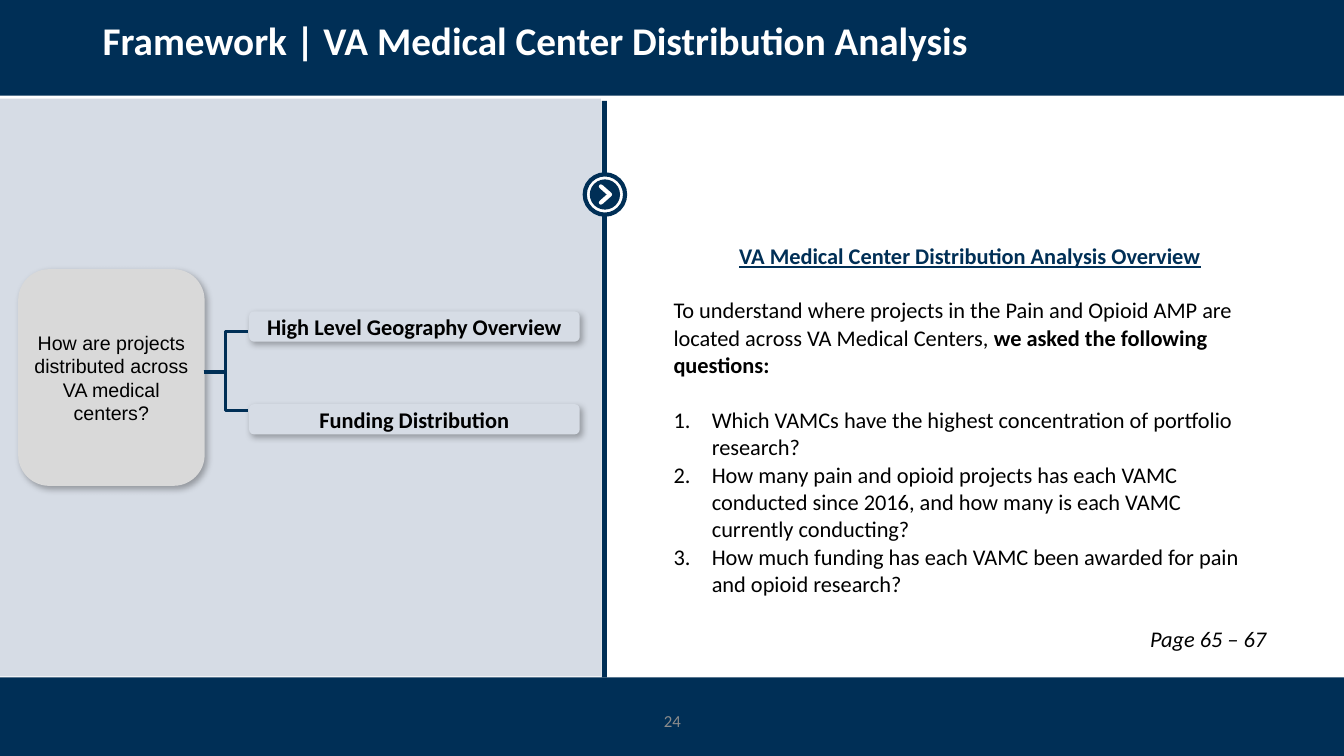
from lxml import etree
from pptx import Presentation
from pptx.dml.color import RGBColor
from pptx.enum.shapes import MSO_CONNECTOR as Link, MSO_SHAPE as Kind
from pptx.enum.text import MSO_ANCHOR as Anchor, PP_ALIGN as Align
from pptx.oxml.ns import qn
from pptx.util import Inches, Pt

HEX = {"navy": "002F56", "pale": "D6DCE5", "gray": "D9D9D9",
       "white": "FFFFFF", "black": "000000", "dim": "8C8C8C"}


def rgb(name):
    return RGBColor.from_string(HEX[name])


def add_run(para, text, size, color="black", font="Calibri",
            bold=False, italic=False, under=False):
    run = para.add_run()
    run.text = text
    face = run.font
    face.name, face.size, face.color.rgb = font, Pt(size), rgb(color)
    face.bold, face.italic, face.underline = bold, italic, under


def set_frame(frame, inset):
    frame.word_wrap = True
    frame.vertical_anchor = Anchor.MIDDLE
    frame.margin_left = frame.margin_right = Inches(inset)
    frame.margin_top = frame.margin_bottom = Inches(min(inset, 0.05))
    return frame.paragraphs[0]


def add_form(slide, kind, box, fill, line=None):
    form = slide.shapes.add_shape(kind, *map(Inches, box))
    form.fill.solid()
    form.fill.fore_color.rgb = rgb(fill)
    if line:
        form.line.color.rgb, form.line.width = rgb(line), Pt(3)
    else:
        form.line.fill.background()
    form.shadow.inherit = False
    return form


def add_label(slide, box, align, text, size, color, bold=False):
    label = slide.shapes.add_textbox(*map(Inches, box))
    para = set_frame(label.text_frame, 0.1)
    para.alignment = align
    add_run(para, text, size, color, bold=bold)
    return para


def add_card(slide, box, fill, inset, text, size, font, bold):
    """Rounded box with a soft shadow and centred text."""
    card = add_form(slide, Kind.ROUNDED_RECTANGLE, box, fill)
    effect = card._element.spPr.find(qn("a:effectLst"))
    shade = etree.SubElement(effect, qn("a:outerShdw"), blurRad=str(Pt(4.5)),
                             dist=str(Pt(2.6)), dir=str(53 * 60000),
                             algn="tl", rotWithShape="0")
    tone = etree.SubElement(shade, qn("a:srgbClr"), val=HEX["black"])
    etree.SubElement(tone, qn("a:alpha"), val="30000")
    para = set_frame(card.text_frame, inset)
    para.alignment = Align.CENTER
    add_run(para, text, size, font=font, bold=bold)


def add_elbow(slide, start, end):
    elbow = slide.shapes.add_connector(Link.ELBOW, *map(Inches, start + end))
    elbow.line.color.rgb, elbow.line.width = rgb("navy"), Pt(2.25)
    etree.SubElement(elbow._element.spPr, qn("a:effectLst"))


def draw_bands(slide, wide):
    add_form(slide, Kind.RECTANGLE, (0, 6.72, wide, 0.78), "navy")
    add_form(slide, Kind.RECTANGLE, (0, 0, wide, 0.95), "navy")
    title = add_label(slide, (0.92, 0.05, 11.5, 0.74), Align.LEFT,
                      "Framework | VA Medical Center Distribution Analysis",
                      28, "white", True)
    title.line_spacing = 0.9
    add_label(slide, (5.17, 6.95, 3, 0.4), Align.CENTER, "24", 12, "dim")


def draw_tree(slide, box):
    """Question on the left, linked to its topics on the right."""
    left, top, wide, high = box
    add_form(slide, Kind.RECTANGLE, box, "pale")
    topics = ["High Level Geography Overview", "Funding Distribution"]
    for row, topic in enumerate(topics):
        y = top + 2.11 + row * 0.92
        add_card(slide, (left + 2.47, y, 3.28, 0.3), "pale", 0,
                 topic, 16, "Calibri", True)
    add_card(slide, (left + 0.18, top + 1.69, 1.85, 2.15), "gray", 0.05,
             "How are projects distributed across VA medical centers?",
             14, "Arial", False)
    for drop in (3.09, 2.31):
        add_elbow(slide, (left + 2.02, top + 2.71), (left + 2.46, top + drop))


def draw_rule(slide, mid, top, high):
    """Upright rule with a round arrow badge."""
    add_form(slide, Kind.RECTANGLE, (mid - 0.03, top, 0.05, high), "navy")
    y = top + 0.93
    for size, fill, line in ((0.4, "white", "navy"), (0.3, "navy", None)):
        box = (mid - size / 2, y - size / 2, size, size)
        add_form(slide, Kind.OVAL, box, fill, line)
    pen = slide.shapes.build_freeform(Inches(mid - 0.04), Inches(y - 0.08))
    pen.add_line_segments([(Inches(mid + 0.05), Inches(y)),
                           (Inches(mid - 0.04), Inches(y + 0.08))], close=False)
    arrow = pen.convert_to_shape()
    arrow.fill.background()
    arrow.line.color.rgb, arrow.line.width = rgb("white"), Pt(3)
    arrow.line._ln.set("cap", "rnd")
    arrow.shadow.inherit = False


def add_number(para):
    props = para._p.get_or_add_pPr()
    props.set("marL", str(Inches(0.38)))
    props.set("indent", str(-Inches(0.38)))
    etree.SubElement(props, qn("a:buFont"), typeface="+mj-lt")
    etree.SubElement(props, qn("a:buAutoNum"), type="arabicPeriod")


def draw_notes(slide, box):
    table = slide.shapes.add_table(1, 1, *map(Inches, box)).table
    table.first_row = table.horz_banding = False
    cell = table.cell(0, 0)
    cell.fill.background()
    frame = cell.text_frame
    gap = Pt(19.5)

    head = frame.paragraphs[0]
    head.alignment = Align.CENTER
    add_run(head, "VA Medical Center Distribution Analysis Overview", 16,
            "navy", bold=True, under=True)

    intro = frame.add_paragraph()
    intro.space_before = gap
    add_run(intro, "To understand where projects in the Pain and Opioid AMP "
            "are located across VA Medical Centers,", 16)
    add_run(intro, " we asked the following questions:", 16, bold=True)

    asks = ["Which VAMCs have the highest concentration of portfolio research?",
            "How many pain and opioid projects has each VAMC conducted since "
            "2016, and how many is each VAMC currently conducting?",
            "How much funding has each VAMC been awarded for pain and opioid "
            "research?"]
    for spot, ask in enumerate(asks):
        para = frame.add_paragraph()
        para.space_before = Pt(0) if spot else gap
        add_number(para)
        add_run(para, ask, 16)

    page = frame.add_paragraph()
    page.alignment = Align.RIGHT
    page.space_before = gap
    add_run(page, "Page 65 – 67", 16, italic=True)


def main():
    deck = Presentation()
    deck.slide_width, deck.slide_height = Inches(13.33), Inches(7.5)
    slide = deck.slides.add_slide(deck.slide_layouts[6])
    draw_bands(slide, 13.33)
    draw_tree(slide, (0, 0.98, 5.96, 5.73))
    draw_notes(slide, (6.58, 2.36, 6.08, 4.1))
    draw_rule(slide, 6, 1, 5.72)
    deck.save("out.pptx")


if __name__ == "__main__":
    main()
